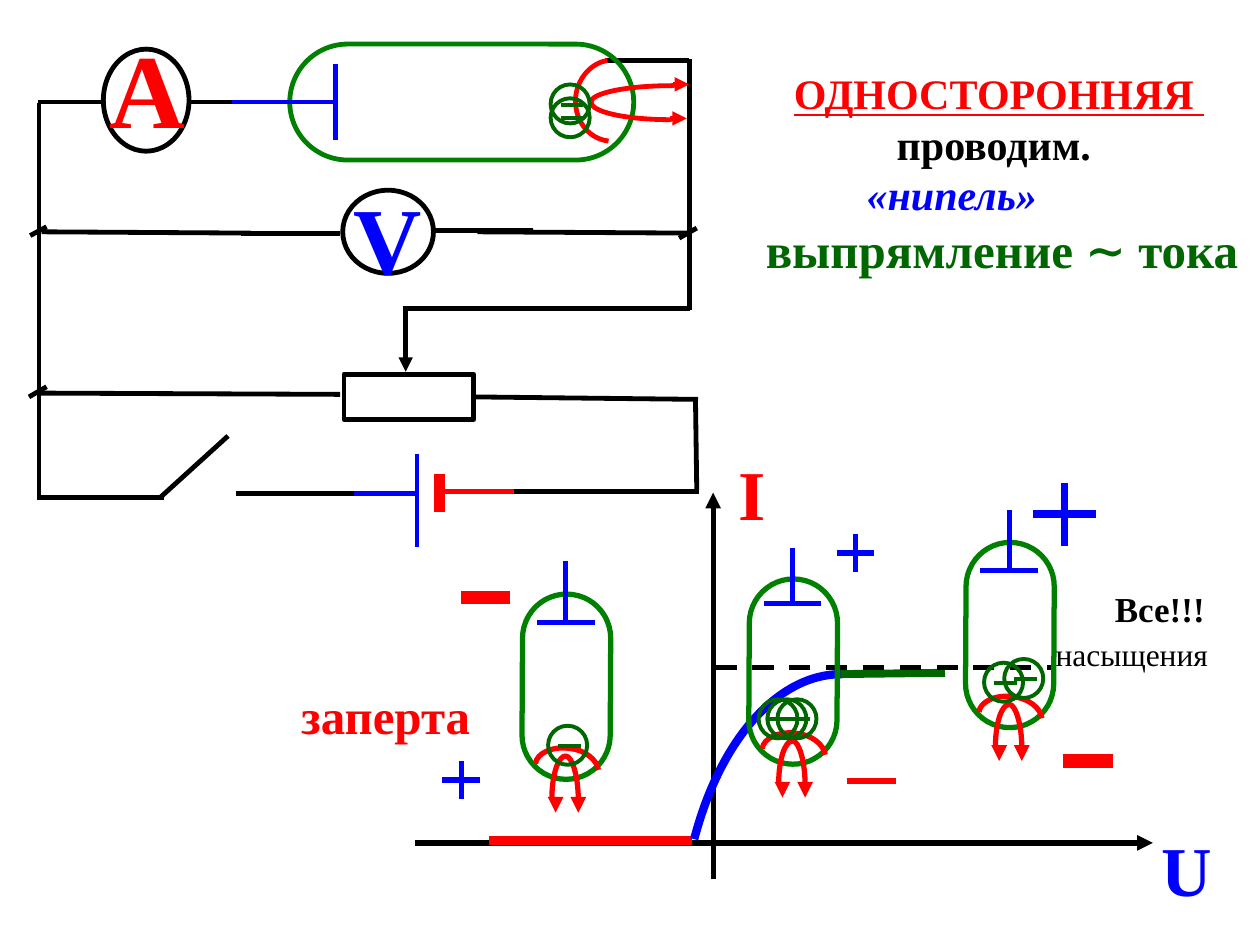
from dataclasses import dataclass
from typing import NamedTuple

from lxml import etree
from pptx import Presentation
from pptx.dml.color import RGBColor
from pptx.enum import dml, shapes, text
from pptx.oxml import ns
from pptx.util import Emu, Pt

PX = 9144  # one px is a hundredth of an inch
FONT = "Times New Roman"
BLACK = RGBColor(0x00, 0x00, 0x00)
RED = RGBColor(0xFF, 0x00, 0x00)
BLUE = RGBColor(0x00, 0x00, 0xFF)
GREEN = RGBColor(0x00, 0x80, 0x00)
DARK_GREEN = RGBColor(0x00, 0x66, 0x00)
WIRE, TUBE_LINE = 2.75, 3
Point = tuple[int, int]


class Line(NamedTuple):
    x1: int
    y1: int
    x2: int
    y2: int
    colour: RGBColor = BLACK
    width: float = WIRE
    arrow: bool = False
    dashed: bool = False


class Plus(NamedTuple):
    x: int
    y: int
    half: int
    width: float


class Span(NamedTuple):
    text: str
    colour: RGBColor
    underline: bool = False


@dataclass
class Para:
    spans: list[Span]
    size: int
    bold: bool = True
    italic: bool = False
    indent: int = 0
    centred: bool = False
    after: int = 0


@dataclass
class Tube:
    x: int
    y: int
    plate: int
    lead: int


deck = Presentation()
deck.slide_width, deck.slide_height = Emu(1000 * PX), Emu(750 * PX)
page = deck.slides.add_slide(deck.slide_layouts[6])


def px(*values: int) -> list[Emu]:
    return [Emu(value * PX) for value in values]


def draw_line(item: Line):
    line = page.shapes.add_connector(
        shapes.MSO_CONNECTOR.STRAIGHT, *px(item.x1, item.y1, item.x2, item.y2))
    line.line.color.rgb = item.colour
    line.line.width = Pt(item.width)
    if item.dashed:
        line.line.dash_style = dml.MSO_LINE.DASH
    properties = line._element.spPr
    if item.arrow:
        outline = properties.find(ns.qn("a:ln"))
        etree.SubElement(outline, ns.qn("a:tailEnd"), type="triangle")
    etree.SubElement(properties, ns.qn("a:effectLst"))
    return line


def outline_shape(shape, colour: RGBColor, width: float):
    shape.shadow.inherit = False
    shape.fill.background()
    shape.line.color.rgb = colour
    shape.line.width = Pt(width)
    return shape


def draw_shape(kind, left: int, top: int, width: int, height: int,
               colour: RGBColor = BLACK, weight: float = WIRE):
    shape = page.shapes.add_shape(kind, *px(left, top, width, height))
    return outline_shape(shape, colour, weight)


def draw_capsule(left: int, top: int, width: int, height: int, weight: float):
    shape = draw_shape(shapes.MSO_SHAPE.ROUNDED_RECTANGLE,
                       left, top, width, height, GREEN, weight)
    shape.adjustments[0] = 0.5
    return shape


def draw_curve(points: list[Point], colour: RGBColor, width: float,
               x: int = 0, y: int = 0) -> None:
    """Chain of cubic Bezier curves: a start, then three points for each."""
    start, *rest = [(x + a, y + b) for a, b in points]
    builder = page.shapes.build_freeform(*start, scale=PX)
    builder.add_line_segments(rest, close=False)
    curve = outline_shape(builder.convert_to_shape(), colour, width)
    segments = list(curve._element.iter(ns.qn("a:lnTo")))
    outline = segments[0].getparent()
    for first in range(0, len(segments), 3):
        bend = etree.SubElement(outline, ns.qn("a:cubicBezTo"))
        for segment in segments[first:first + 3]:
            bend.append(segment[0])
            outline.remove(segment)


def draw_electron(left: int, top: int) -> None:
    draw_line(Line(left + 8, top + 16, left + 26, top + 16, DARK_GREEN, 2.25))
    draw_shape(shapes.MSO_SHAPE.OVAL, left, top, 31, 31, DARK_GREEN, 2.25)


def draw_plus(plus: Plus) -> None:
    x, y, half, width = plus
    draw_line(Line(x - half, y, x + half, y, BLUE, width))
    draw_line(Line(x, y + half, x, y - half, BLUE, width))


def draw_tube(tube: Tube) -> None:
    x, y = tube.x, tube.y
    draw_capsule(x - 73, y - 35, 147, 70, TUBE_LINE).rotation = 90.3
    draw_line(Line(x + 23, tube.plate, x - 23, tube.plate, BLUE, TUBE_LINE))
    draw_line(Line(x, tube.plate, x, tube.lead, BLUE, TUBE_LINE))
    draw_curve([(26, 66), (25, 58), (15, 50), (3, 49),
                (-11, 47), (-23, 53), (-24, 61)], RED, TUBE_LINE, x, y)
    draw_curve([(10, 93), (10, 92), (10, 91), (10, 90), (10, 71), (5, 55),
                (0, 55), (-6, 55), (-11, 70), (-11, 89)], RED, TUBE_LINE, x, y)
    for dx in (-8, 10):
        draw_line(Line(x + dx, y + 93, x + dx, y + 100, RED, TUBE_LINE, True))


def write(left: int, top: int, width: int, height: int, *paras: Para,
          margin: int = 10) -> None:
    frame = page.shapes.add_textbox(*px(left, top, width, height)).text_frame
    frame.word_wrap = True
    frame.margin_left = Emu(margin * PX)
    for index, para in enumerate(paras):
        block = frame.add_paragraph() if index else frame.paragraphs[0]
        font = block.font
        font.name, font.size = FONT, Pt(para.size)
        font.bold, font.italic = para.bold, para.italic
        block.space_after = Pt(para.after)
        if para.centred:
            block.alignment = text.PP_ALIGN.CENTER
        if para.indent:
            block._p.get_or_add_pPr().set("marL", str(para.indent * PX))
        for span in para.spans:
            run = block.add_run()
            run.text = span.text
            run.font.color.rgb = span.colour
            if span.underline:
                run.font.underline = True


# Circuit: meters, rheostat and wires
draw_shape(shapes.MSO_SHAPE.OVAL, 82, 39, 68, 81)
draw_shape(shapes.MSO_SHAPE.OVAL, 272, 151, 72, 66)
rheostat = draw_shape(shapes.MSO_SHAPE.RECTANGLE, 273, 297, 103, 36)
for wire in [
    Line(37, 307, 23, 315), Line(37, 180, 24, 187), Line(553, 181, 539, 189),
    Line(30, 81, 82, 81), Line(152, 81, 204, 81),
    Line(33, 184, 199, 185), Line(191, 185, 270, 185),
    Line(344, 183, 423, 183), Line(379, 184, 546, 185),
    Line(31, 82, 31, 397), Line(547, 47, 547, 246),
    Line(30, 312, 270, 313), Line(322, 243, 322, 295, arrow=True),
    Line(321, 245, 548, 245), Line(552, 317, 553, 389),
    Line(32, 395, 130, 395), Line(127, 395, 181, 346), Line(187, 392, 285, 392),
    Line(393, 390, 555, 390), Line(547, 48, 480, 48),
]:
    draw_line(wire)
draw_line(Line(554, 317, 376, 315)).end_connect(rheostat, 3)

# Battery
for part in [Line(281, 392, 329, 392, BLUE), Line(331, 360, 331, 434, BLUE),
             Line(349, 376, 349, 406, RED, 6), Line(347, 390, 408, 390, RED)]:
    draw_line(part)

# Vacuum diode in the circuit
draw_capsule(230, 35, 273, 92, WIRE)
draw_line(Line(266, 51, 266, 111, BLUE))
draw_line(Line(264, 81, 184, 81, BLUE))
draw_curve([(482, 48), (470, 50), (459, 61), (457, 76),
            (455, 94), (466, 110), (483, 112)], RED, WIRE)
draw_curve([(538, 68), (536, 68), (534, 67), (533, 68), (497, 68), (469, 74),
            (469, 81), (469, 89), (497, 95), (533, 95)], RED, WIRE)
draw_line(Line(532, 94, 545, 94, RED, arrow=True))
draw_line(Line(534, 67, 547, 67, RED, arrow=True))

# Axes and current curve
draw_line(Line(566, 698, 566, 391, width=3, arrow=True))
draw_line(Line(329, 669, 915, 669, width=3, arrow=True))
draw_line(Line(388, 667, 549, 667, RED, 5.5))
draw_curve([(668, 535), (618, 535), (572, 586), (551, 666)], BLUE, 4.75)
draw_line(Line(667, 535, 750, 534, DARK_GREEN, 4.5))
draw_line(Line(568, 530, 838, 530, width=3, dashed=True))

# Tubes: locked, conducting, saturated
for tube in [Tube(449, 545, 494, 445), Tube(629, 533, 479, 435),
             Tube(801, 504, 453, 405)]:
    draw_tube(tube)
for electron in [(617, 555), (609, 555), (602, 555), (781, 526), (797, 523),
                 (435, 576), (437, 67), (437, 78)]:
    draw_electron(*electron)

# Polarity signs
for plus in [Plus(679, 439, 15, 3), Plus(845, 408, 25, 4.25),
             Plus(366, 619, 15, 3)]:
    draw_plus(plus)
for x, y, weight in [(366, 474, 7.5), (672, 620, 3.25), (844, 604, 7.5)]:
    draw_line(Line(x, y, x + 39, y, RED, weight))

# Labels
write(39, 14, 129, 121, Para([Span("А", RED)], 60, after=10), margin=48)
write(271, 138, 125, 106, Para([Span("V", BLUE)], 54, after=10))
write(576, 353, 70, 77, Para([Span("I", RED)], 40))
write(912, 651, 78, 77, Para([Span("U", BLUE)], 40))
write(219, 539, 180, 57, Para([Span("заперта", RED)], 28), margin=20)
write(875, 461, 94, 44, Para([Span("Все!!!", BLACK)], 20))
write(828, 499, 148, 40, Para([Span("насыщения", BLACK)], 18, bold=False))
write(586, 49, 414, 209,
      Para([Span("ОДНОСТОРОННЯЯ  ", RED, True), Span("проводим. ", BLACK)],
           24, centred=True),
      Para([Span("«нипель»", BLUE)], 24, italic=True, indent=92),
      Para([Span("выпрямление ∼ тока", DARK_GREEN)], 28, indent=12))

deck.save("out.pptx")
